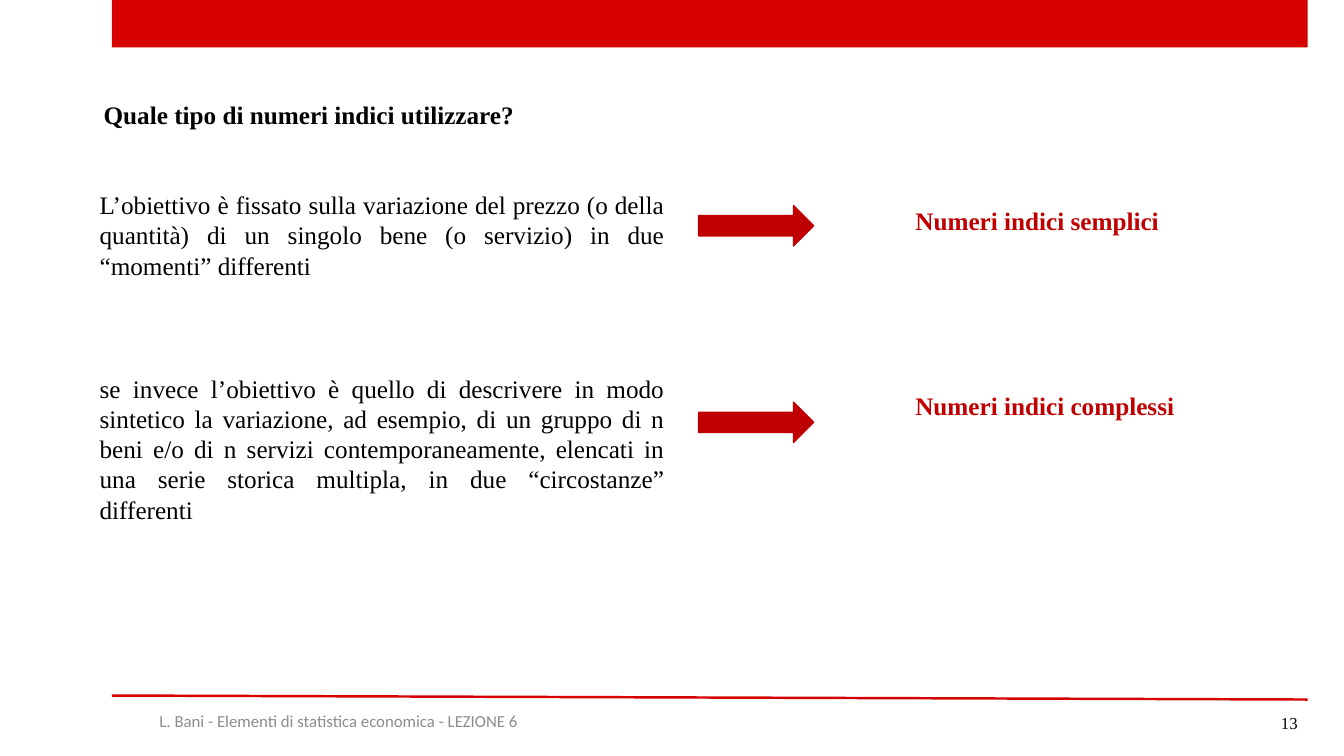
from dataclasses import dataclass

from lxml import etree
from pptx import Presentation
from pptx.dml.color import RGBColor
from pptx.enum.shapes import MSO_CONNECTOR, MSO_SHAPE
from pptx.enum.text import MSO_ANCHOR, MSO_AUTO_SIZE, PP_ALIGN
from pptx.oxml.ns import qn
from pptx.util import Pt

RECTANGLE, RIGHT_ARROW = MSO_SHAPE.RECTANGLE, MSO_SHAPE.RIGHT_ARROW
STRAIGHT = MSO_CONNECTOR.STRAIGHT
TOP, MIDDLE = MSO_ANCHOR.TOP, MSO_ANCHOR.MIDDLE
LEFT, CENTER, RIGHT, JUSTIFY = (
    PP_ALIGN.LEFT, PP_ALIGN.CENTER, PP_ALIGN.RIGHT, PP_ALIGN.JUSTIFY)
FIT_SHAPE, NO_FIT = MSO_AUTO_SIZE.SHAPE_TO_FIT_TEXT, MSO_AUTO_SIZE.NONE

EMU_PER_PX = 9144  # 100 px to the inch
SLIDE_W, SLIDE_H = 1333, 750


@dataclass(frozen=True)
class Theme:
    band: RGBColor = RGBColor(0xD6, 0x00, 0x00)
    accent: RGBColor = RGBColor(0xC0, 0x00, 0x00)
    ink: RGBColor = RGBColor(0x00, 0x00, 0x00)
    muted: RGBColor = RGBColor(0x8C, 0x8C, 0x8C)
    serif: str = "Times New Roman"
    sans: str = "Calibri"
    body_size: int = 18
    footer_size: int = 12


THEME = Theme()
BODY = {"name": THEME.serif, "size": Pt(THEME.body_size), "bold": False}
HEADING = {**BODY, "bold": True}
PAGE_NUMBER = {**BODY, "size": Pt(THEME.footer_size)}
COURSE = {**PAGE_NUMBER, "name": THEME.sans}

CASES = [
    # top, height, arrow offset, answer offset, answer width, goal, answer
    (183, 101, 21, 16, 271,
     "L’obiettivo è fissato sulla variazione del prezzo (o della quantità) di "
     "un singolo bene (o servizio) in due “momenti” differenti",
     "Numeri indici semplici"),
    (365, 162, 34, 17, 286,
     "se invece l’obiettivo è quello di descrivere in modo sintetico la "
     "variazione, ad esempio, di un gruppo di n beni e/o di n servizi "
     "contemporaneamente, elencati in una serie storica multipla, in due "
     "“circostanze” differenti",
     "Numeri indici complessi"),
]


def px(*lengths):
    return [length * EMU_PER_PX for length in lengths]


def add_text(slide, box, text, font_format, color=THEME.ink, align=LEFT,
             anchor=TOP, wrap=True, fit=FIT_SHAPE):
    frame = slide.shapes.add_textbox(*px(*box)).text_frame
    frame.word_wrap = wrap
    frame.auto_size = fit
    frame.vertical_anchor = anchor
    paragraph = frame.paragraphs[0]
    paragraph.alignment = align
    run = paragraph.add_run()
    run.text = text
    for attribute, value in font_format.items():
        setattr(run.font, attribute, value)
    run.font.color.rgb = color


def add_solid(slide, kind, box, color):
    solid = slide.shapes.add_shape(kind, *px(*box))
    solid.shadow.inherit = False
    solid.fill.solid()
    solid.fill.fore_color.rgb = color
    return solid


def add_header(slide, box):
    band = add_solid(slide, RECTANGLE, box, THEME.band)
    band.line.fill.background()


def add_case(slide, box, arrow_offset, answer_offset, answer_width, goal, answer):
    left, top, width, height = box
    # Goal
    add_text(slide, (left, top, width, height), goal, BODY, align=JUSTIFY)
    # Arrow from goal to answer
    arrow = add_solid(slide, RIGHT_ARROW,
                      (left + width + 24, top + arrow_offset, 114, 40),
                      THEME.accent)
    arrow.line.color.rgb = THEME.accent
    arrow.line.width = Pt(1)
    # Answer
    add_text(slide, (left + width + 229, top + answer_offset, answer_width, 40),
             answer, HEADING, THEME.accent, wrap=False)


def add_footer(slide, box):
    left, top, width, slope = box
    # Rule, slightly sloping
    rule = slide.shapes.add_connector(
        STRAIGHT, *px(left, top, left + width, top + slope))
    rule.line.color.rgb = THEME.band
    rule.line.width = Pt(1.75)
    etree.SubElement(rule._element.spPr, qn("a:effectLst"))
    # Course name and page number
    add_text(slide, (left, top + 5, 450, 40),
             "L. Bani - Elementi di statistica economica - LEZIONE 6",
             COURSE, THEME.muted, CENTER, MIDDLE, fit=NO_FIT)
    add_text(slide, (left + width - 300, top + 7, 300, 40), "13",
             PAGE_NUMBER, align=RIGHT, anchor=MIDDLE, fit=NO_FIT)


def build_slide(deck):
    slide = deck.slides.add_slide(deck.slide_layouts[6])
    add_header(slide, (111, 0, 1186, 47))
    add_text(slide, (93, 94, 1076, 40),
             "Quale tipo di numeri indici utilizzare?", HEADING)
    for top, height, *parts in CASES:
        add_case(slide, (89, top, 580, height), *parts)
    add_footer(slide, (111, 690, 1186, 4))


def main():
    deck = Presentation()
    deck.slide_width, deck.slide_height = px(SLIDE_W, SLIDE_H)
    build_slide(deck)
    deck.save("out.pptx")


if __name__ == "__main__":
    main()
